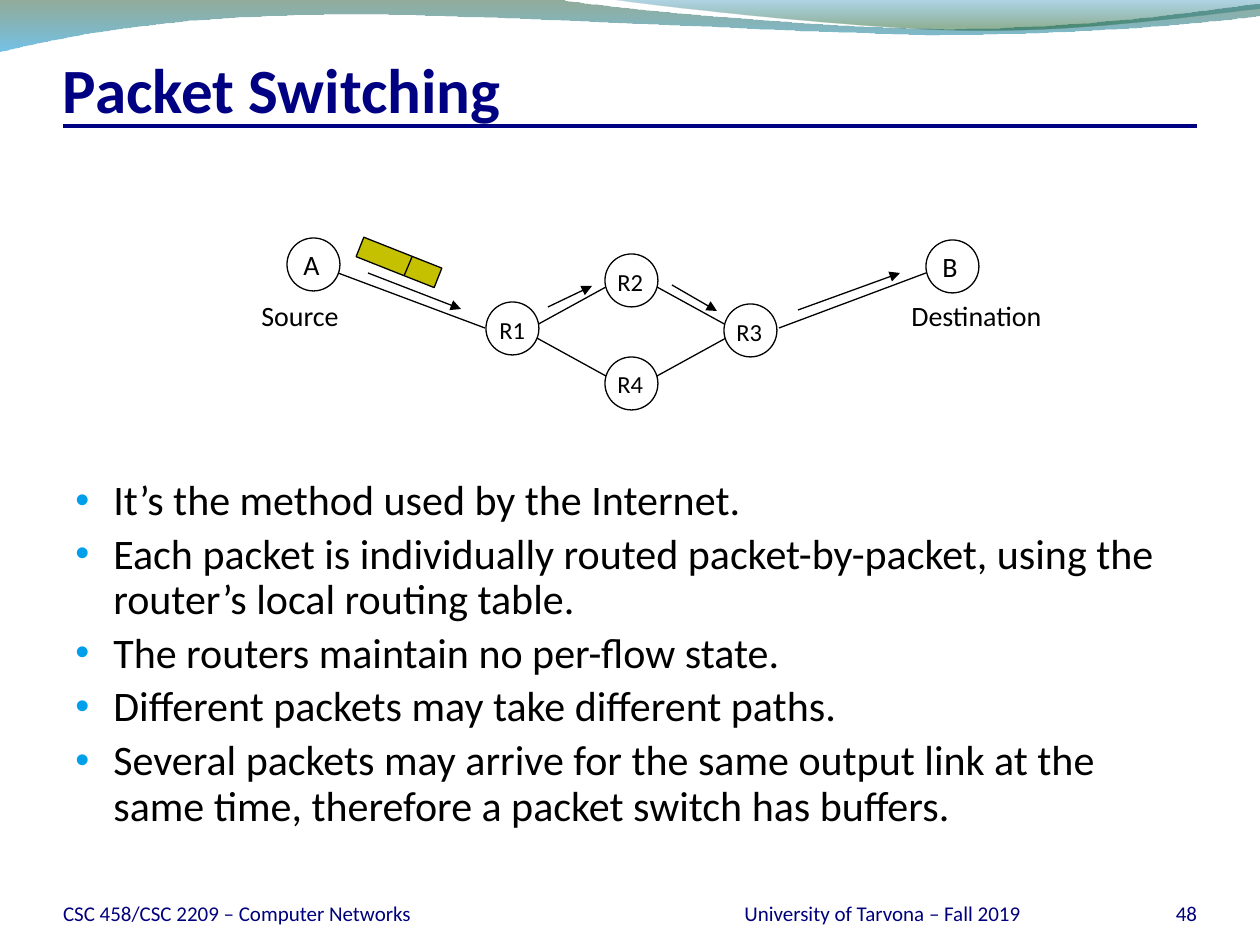
"""Build the packet switching slide."""
import pptx
import pptx.dml.color
import pptx.enum.shapes
import pptx.enum.text
import pptx.oxml
import pptx.oxml.ns
import pptx.util

UNIT = 914400 / 126
KIND = pptx.enum.shapes.MSO_SHAPE
SIDE = pptx.enum.text.PP_ALIGN
EDGE = pptx.enum.text.MSO_ANCHOR
NAVY, DEEP, BLACK, WHITE = "000082", "00007C", "000000", "FFFFFF"
SPACE = pptx.oxml.ns.nsdecls("a")


def paint(color, code):
    color.rgb = pptx.dml.color.RGBColor.from_string(code)


deck = pptx.Presentation()
deck.slide_width, deck.slide_height = [round(n * UNIT) for n in (1260, 945)]
slide = deck.slides.add_slide(deck.slide_layouts[6])
shapes = slide.shapes

waves = [
    ([[(0, -1)], [(554, -1)], [(600, 8), (837, 29), (955, 29)],
      [(1075, 29), (1207, 11), (1260, 4)], [(1261, 16)],
      [(1239, 20), (1096, 35), (940, 35)], [(784, 34), (481, 13), (324, 15)],
      [(163, 16), (58, 38), (-1, 52)]],
     [(0, "0F461E", 45), (1, "0090D6", 55)]),
    ([[(604, -1)], [(641, 5), (859, 29), (969, 30)],
      [(1079, 32), (1211, 14), (1260, 9)], [(1260, -1)]],
     [(0, "0076AF", 30), (0.8, "0D5821", 45)]),
]
for parts, stops in waves:
    dots = [(x * UNIT, y * UNIT) for part in parts for x, y in part]
    draft = shapes.build_freeform(*dots[0])
    draft.add_line_segments(dots[1:])
    wave = draft.convert_to_shape()
    legs = iter(list(wave._element.iter(pptx.oxml.ns.qn("a:lnTo"))))
    for part in parts[1:]:
        group = [next(legs) for dot in part]
        if len(group) == 3:
            curve = pptx.oxml.parse_xml(f"<a:cubicBezTo {SPACE}/>")
            group[0].addprevious(curve)
            for leg in group:
                curve.append(leg[0])
                leg.getparent().remove(leg)
    wave.shadow.inherit = False
    wave.line.fill.background()
    wave.fill.gradient()
    wave.fill.gradient_angle = 270
    for stop, (place, code, alpha) in zip(wave.fill.gradient_stops, stops):
        stop.position = place
        paint(stop.color, code)
    tints = wave._element.spPr.iter(pptx.oxml.ns.qn("a:srgbClr"))
    for tint, (place, code, alpha) in zip(tints, stops):
        tint.append(pptx.oxml.parse_xml(f'<a:alpha {SPACE} val="{alpha * 1000}"/>'))

nodes = [
    (KIND.FLOWCHART_DECISION, (525, 273, 213, 117), 0, None),
    (KIND.OVAL, (287, 238, 53, 53), 0, None),
    (KIND.OVAL, (486, 302, 53, 53), 0, WHITE),
    (KIND.OVAL, (605, 254, 53, 53), 0, WHITE),
    (KIND.OVAL, (605, 357, 53, 53), 0, WHITE),
    (KIND.OVAL, (724, 304, 53, 53), 0, WHITE),
    (KIND.OVAL, (926, 240, 53, 53), 0, None),
    (KIND.RECTANGLE, (357, 252, 84, 21), 21.6, "C5C000"),
]
for kind, area, turn, code in nodes:
    node = shapes.add_shape(kind, *[round(n * UNIT) for n in area])
    node.shadow.inherit = False
    node.rotation = turn
    node.line.width = pptx.util.Pt(0.75)
    paint(node.line.color, BLACK)
    if code:
        node.fill.solid()
        paint(node.fill.fore_color, code)
    else:
        node.fill.background()

flat = {"margin_left": 0, "margin_right": 0, "margin_top": 0,
        "margin_bottom": 0, "vertical_anchor": EDGE.BOTTOM}
head = {**flat, "margin_top": round(6 * UNIT)}
tight = {"word_wrap": False}
points = [
    "It’s the method used by the Internet.",
    "Each packet is individually routed packet-by-packet, using the router’s local routing table.",
    "The routers maintain no per-flow state.",
    "Different packets may take different paths.",
    "Several packets may arrive for the same output link at the same time, "
    "therefore a packet switch has buffers.",
]
texts = [
    ((63, 42, 1134, 84), ["Packet Switching"], 36, NAVY, SIDE.LEFT, head),
    ((291, 241, 42, 47), ["A"], 16, BLACK, SIDE.LEFT, tight),
    ((487, 309, 52, 42), ["R1"], 14, BLACK, SIDE.LEFT, tight),
    ((605, 261, 52, 42), ["R2"], 14, BLACK, SIDE.LEFT, tight),
    ((605, 363, 52, 42), ["R4"], 14, BLACK, SIDE.LEFT, tight),
    ((724, 311, 52, 42), ["R3"], 14, BLACK, SIDE.LEFT, tight),
    ((930, 243, 40, 47), ["B"], 16, BLACK, SIDE.LEFT, tight),
    ((249, 292, 134, 47), ["Source"], 16, BLACK, SIDE.LEFT, {}),
    ((899, 292, 203, 47), ["Destination"], 16, BLACK, SIDE.LEFT, {}),
    ((63, 876, 609, 50), ["CSC 458/CSC 2209 – Computer Networks"], 12, DEEP,
     SIDE.LEFT, flat),
    ((683, 876, 399, 50), ["University of Tarvona – Fall 2019"], 12, DEEP,
     SIDE.CENTER, flat),
    ((1092, 876, 105, 50), ["48"], 12, DEEP, SIDE.RIGHT, flat),
    ((63, 473, 1134, 388), points, 24, BLACK, SIDE.LEFT, {}),
]
for area, lines, size, code, side, frame in texts:
    box = shapes.add_textbox(*[round(n * UNIT) for n in area])
    for name, value in {"word_wrap": True, **frame}.items():
        setattr(box.text_frame, name, value)
    box.text_frame.text = "\n".join(lines)
    look = {"name": "Calibri", "size": pptx.util.Pt(size), "bold": size == 36}
    for para in box.text_frame.paragraphs:
        para.alignment = side
        font = para.runs[0].font
        for name, value in look.items():
            setattr(font, name, value)
        paint(font.color, code)

for para in box.text_frame.paragraphs:
    para.line_spacing = 0.9
    para.space_before = pptx.util.Pt(4.8)
    props = para._p.get_or_add_pPr()
    props.set("marL", str(round(38 * UNIT)))
    props.set("indent", str(round(-38 * UNIT)))
    for mark in (f'<a:buClr {SPACE}><a:srgbClr val="009FEC"/></a:buClr>',
                 f'<a:buSzPct {SPACE} val="95000"/>',
                 f'<a:buFont {SPACE} typeface="Arial"/>',
                 f'<a:buChar {SPACE} char="•"/>'):
        props.append(pptx.oxml.parse_xml(mark))

links = [
    ((63, 126, 1197, 126), NAVY, 2.25, False),
    ((338, 273, 485, 328), BLACK, 0.75, False),
    ((779, 328, 926, 273), BLACK, 0.75, False),
    ((412, 257, 404, 276), BLACK, 0.75, False),
    ((368, 273, 461, 309), BLACK, 0.75, True),
    ((548, 307, 592, 286), BLACK, 0.75, True),
    ((672, 285, 717, 311), BLACK, 0.75, True),
    ((798, 310, 900, 273), BLACK, 0.75, True),
]
for ends, code, width, arrow in links:
    link = shapes.add_connector(pptx.enum.shapes.MSO_CONNECTOR.STRAIGHT,
                                *[round(n * UNIT) for n in ends])
    link.line.width = pptx.util.Pt(width)
    paint(link.line.color, code)
    if arrow:
        tail = pptx.oxml.parse_xml(f'<a:tailEnd {SPACE} type="triangle"/>')
        link.line._get_or_add_ln().append(tail)
    link._element.spPr.append(pptx.oxml.parse_xml(f"<a:effectLst {SPACE}/>"))

deck.save("out.pptx")
